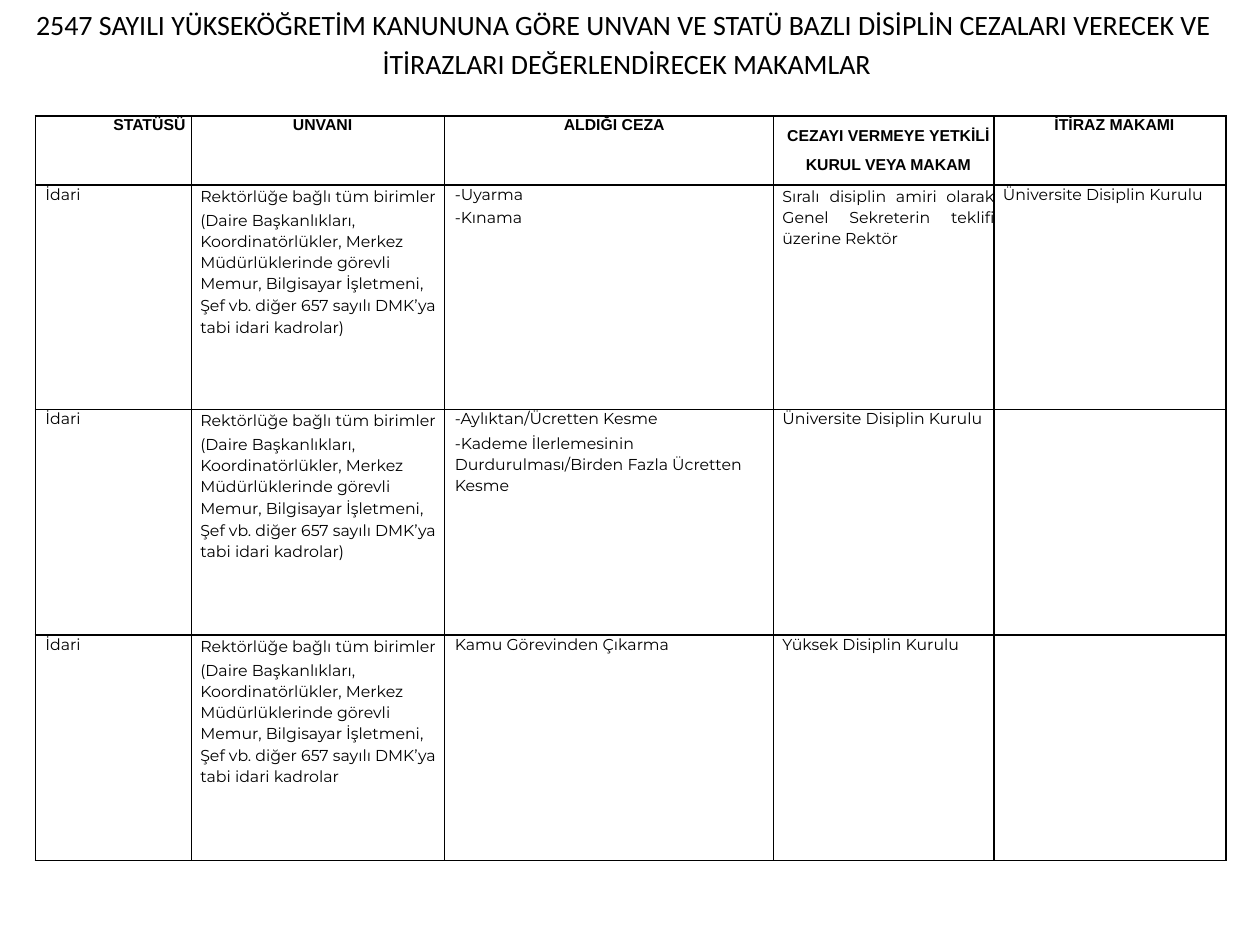
from dataclasses import dataclass

from lxml import etree
from pptx import Presentation
from pptx import util as u
from pptx.dml.color import RGBColor
from pptx.enum import text
from pptx.oxml.ns import qn

COLORS = {"ink": "000000", "border": "000000"}
SLIDE_W, SLIDE_H = 10, 7.5
COLUMNS = [1.24, 2.01, 2.61, 1.75, 1.84]
ROWS = [0.55, 1.78, 1.79, 1.79]
TABLE_LEFT, TABLE_TOP = 0.28, 0.92
LEFT, CENTER, JUSTIFY = (text.PP_ALIGN.LEFT, text.PP_ALIGN.CENTER,
                         text.PP_ALIGN.JUSTIFY)


@dataclass
class Para:
    words: str
    before: float = 1.5
    align: text.PP_ALIGN = LEFT
    indent: float = 0.07
    spacing: float | u.Length | None = None
    font: str = "Montserrat"
    size: float = 9
    bold: bool = False


def header(words: str, indent: float = 0.07, before: float = 4,
           spacing: u.Length | None = None) -> list[Para]:
    return [Para(words, before, CENTER, indent, spacing, "Arial", bold=True)]


def staff_units(ending: str) -> list[Para]:
    return [
        Para("Rektörlüğe bağlı tüm birimler", align=JUSTIFY, spacing=1.1),
        Para("(Daire Başkanlıkları, Koordinatörlükler, Merkez Müdürlüklerinde "
             "görevli Memur, Bilgisayar İşletmeni,", spacing=1.1),
        Para("Şef vb. diğer 657 sayılı DMK’ya tabi idari " + ending, 0.5, spacing=1.1),
    ]


def status(before: float) -> list[Para]:
    return [Para("İdari", before, indent=0.08)]


def write(frame: text.MSO_ANCHOR, paras: list[Para]) -> None:
    frame.text = "\n".join(para.words for para in paras)
    for paragraph, para in zip(frame.paragraphs, paras):
        paragraph.alignment = para.align
        paragraph.space_before = u.Pt(para.before)
        paragraph.line_spacing = para.spacing
        properties = paragraph._p.get_or_add_pPr()
        properties.set("marL", str(u.Inches(para.indent)))
        properties.set("indent", "0")
        for run in paragraph.runs:
            run.font.name = para.font
            run.font.size = u.Pt(para.size)
            run.font.bold = para.bold
            run.font.color.rgb = RGBColor.from_string(COLORS["ink"])


def add_borders(cell) -> None:
    properties = cell._tc.get_or_add_tcPr()
    for position, side in enumerate(("lnL", "lnR", "lnT", "lnB")):
        line = etree.Element(qn(f"a:{side}"), w=str(u.Pt(1)))
        fill = etree.SubElement(line, qn("a:solidFill"))
        etree.SubElement(fill, qn("a:srgbClr"), val=COLORS["border"])
        properties.insert(position, line)


TITLE = [
    Para(words, 3.2, CENTER, 0, font="Calibri", size=16)
    for words in (
        "2547 SAYILI YÜKSEKÖĞRETİM KANUNUNA GÖRE UNVAN VE STATÜ BAZLI "
        "DİSİPLİN CEZALARI VERECEK VE ",
        "İTİRAZLARI DEĞERLENDİRECEK MAKAMLAR",
    )
]

AUTHORITIES = [
    [
        header("STATÜSÜ", 0.57),
        header("UNVANI"),
        header("ALDIĞI CEZA", 0.08),
        header("CEZAYI VERMEYE YETKİLİ KURUL VEYA MAKAM", before=0.6,
               spacing=u.Pt(16.6)),
        header("İTİRAZ MAKAMI"),
    ],
    [
        status(1.5),
        staff_units("kadrolar)"),
        [Para("-Uyarma", indent=0.08), Para("-Kınama", 1.8, indent=0.08)],
        [Para("Sıralı disiplin amiri olarak Genel Sekreterin teklifi üzerine Rektör",
              align=JUSTIFY, spacing=1.1)],
        [Para("Üniversite Disiplin Kurulu")],
    ],
    [
        status(2.2),
        staff_units("kadrolar)"),
        [Para("-Aylıktan/Ücretten Kesme", 2.2, indent=0.08),
         Para("-Kademe İlerlemesinin Durdurulması/Birden Fazla Ücretten Kesme",
              1.8, indent=0.08, spacing=1.1)],
        [Para("Üniversite Disiplin Kurulu", 2.2)],
        [],
    ],
    [
        status(2.4),
        staff_units("kadrolar"),
        [Para("Kamu Görevinden Çıkarma", 2.4, indent=0.08)],
        [Para("Yüksek Disiplin Kurulu", 2.4)],
        [],
    ],
]


def add_title(slide) -> None:
    title = slide.shapes.title
    title.left, title.top = u.Inches(0.12), u.Inches(0.01)
    title.width, title.height = u.Inches(9.71), u.Inches(0.69)
    frame = title.text_frame
    frame.word_wrap = False
    frame.auto_size = text.MSO_AUTO_SIZE.SHAPE_TO_FIT_TEXT
    frame.vertical_anchor = text.MSO_ANCHOR.TOP
    write(frame, TITLE)


def add_authority_table(slide) -> None:
    table = slide.shapes.add_table(
        len(ROWS), len(COLUMNS), u.Inches(TABLE_LEFT), u.Inches(TABLE_TOP),
        u.Inches(sum(COLUMNS)), u.Inches(sum(ROWS))).table
    table.first_row = table.horz_banding = False
    for column, width in zip(table.columns, COLUMNS):
        column.width = u.Inches(width)
    for row, height, contents in zip(table.rows, ROWS, AUTHORITIES):
        row.height = u.Inches(height)
        for cell, paras in zip(row.cells, contents):
            cell.margin_left = cell.margin_right = 0
            cell.margin_top = cell.margin_bottom = 0
            cell.fill.background()
            add_borders(cell)
            if paras:
                write(cell.text_frame, paras)


def main() -> None:
    deck = Presentation()
    deck.slide_width, deck.slide_height = u.Inches(SLIDE_W), u.Inches(SLIDE_H)
    slide = deck.slides.add_slide(deck.slide_layouts.get_by_name("Title Only"))
    # Heading
    add_title(slide)
    # Penalties and the bodies that decide them
    add_authority_table(slide)
    deck.save("out.pptx")


if __name__ == "__main__":
    main()
